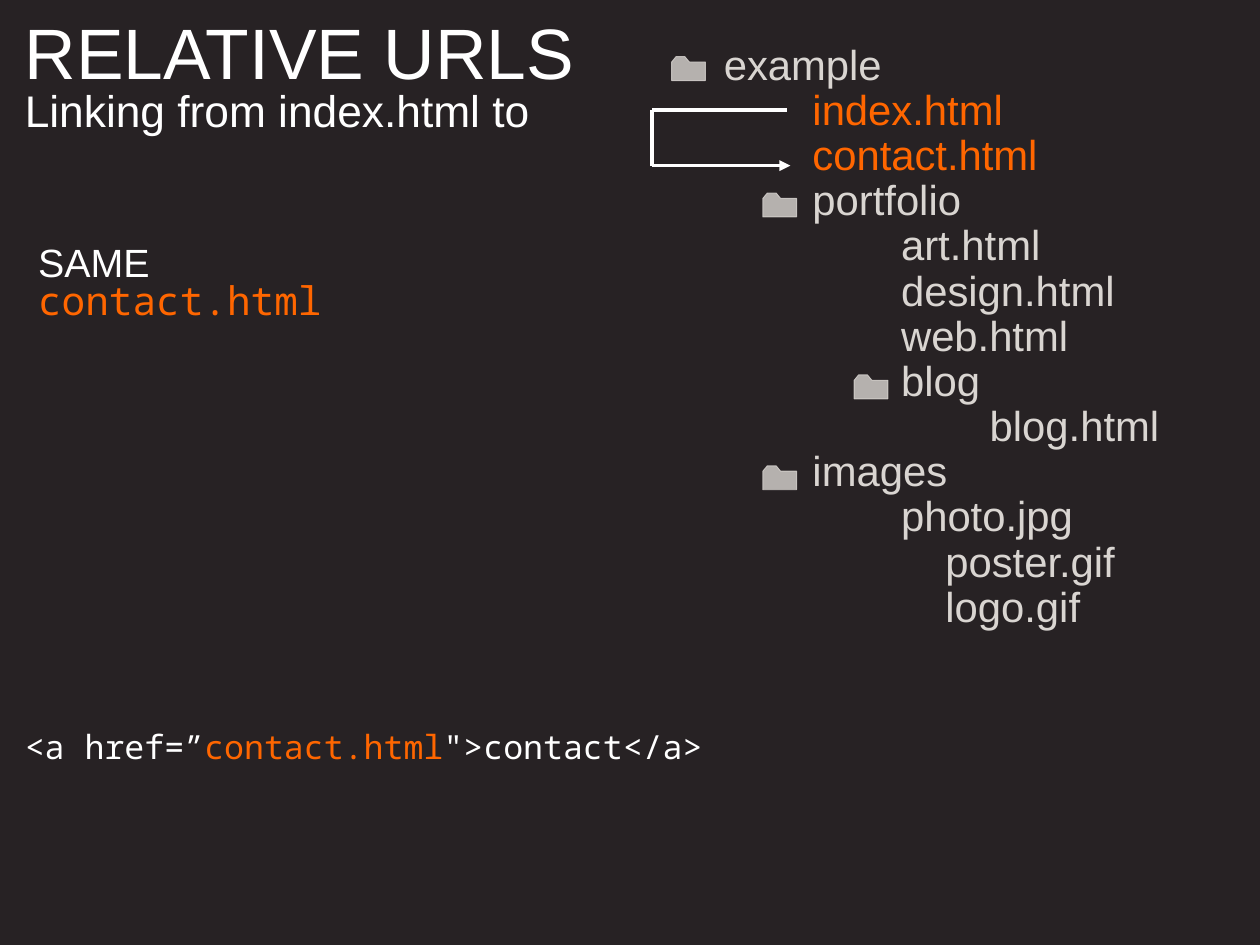
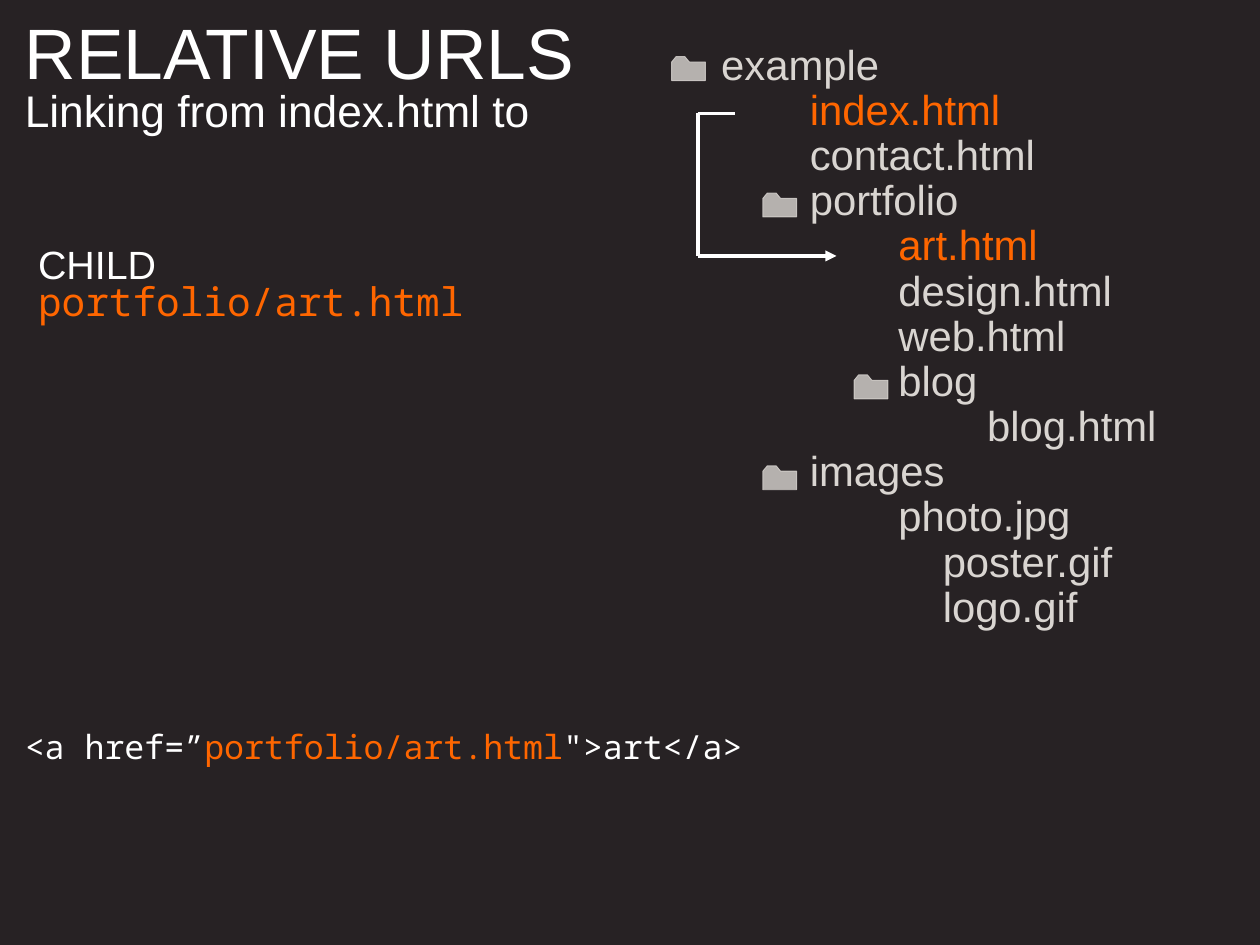
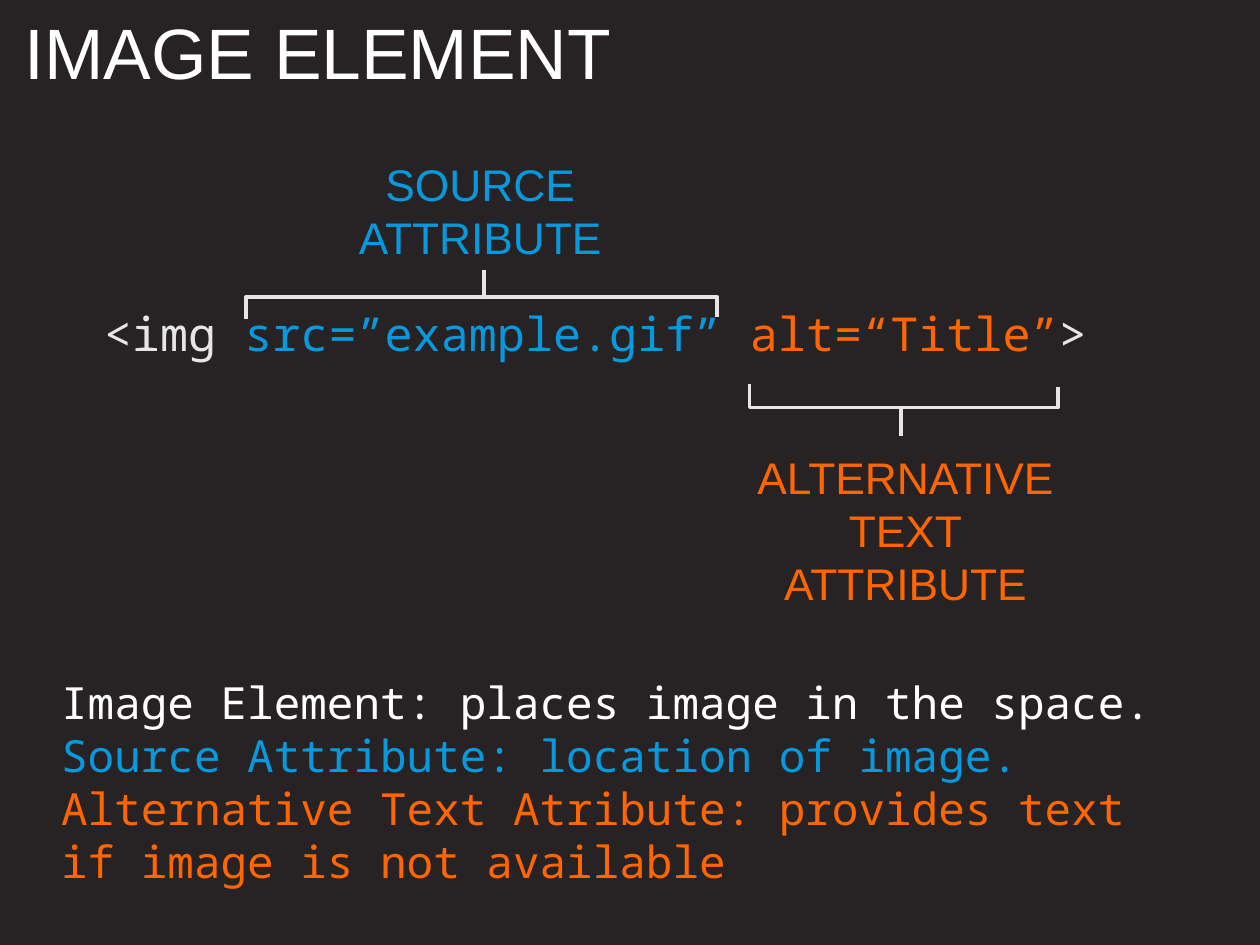
from pptx import Presentation
from pptx.dml.color import RGBColor
from pptx.enum.shapes import MSO_CONNECTOR
from pptx.enum.text import MSO_ANCHOR, PP_ALIGN
from pptx.oxml.ns import qn
from pptx.util import Inches, Pt
from lxml.etree import SubElement

COLORS = {
    "background": "272224",
    "white": "FFFFFF",
    "orange": "FF6600",
    "blue": "0799DE",
    "sand": "D9D5D1",
    "gray": "E6E6E6",
}
SANS = "Arial"
MONO = "Noto Sans Mono"

# (name, indent in inches)
FILE_TREE = [
    ("example", 0), ("index.html", 1), ("contact.html", 1), ("portfolio", 1),
    ("art.html", 2), ("design.html", 2), ("web.html", 2), ("blog", 2),
    ("blog.html", 3), ("images", 1), ("photo.jpg", 2), ("poster.gif", 2.5),
    ("logo.gif", 2.5),
]
FOLDERS = ("example", "portfolio", "blog", "images")
FOLDER_ROW = 1.54 / 3
FOLDER_INDENT = 1.03
FOLDER_OUTLINE = [(0.38, 0.27), (0.38, 0.06), (0.2, 0.06), (0.15, 0),
                  (0.05, 0), (0, 0.06), (0, 0.27)]


def rgb(name):
    return RGBColor.from_string(COLORS[name])


def add_text_box(slide, left, top, width, height, anchor=MSO_ANCHOR.TOP):
    box = slide.shapes.add_textbox(Inches(left), Inches(top), Inches(width), Inches(height))
    tf = box.text_frame
    tf.word_wrap = True
    tf.vertical_anchor = anchor
    tf.margin_left = tf.margin_top = tf.margin_right = tf.margin_bottom = 0
    return tf


def add_paragraph(tf, runs, size, font=SANS, align=PP_ALIGN.LEFT, spacing=None, indent=0):
    """Fill the first empty paragraph or append one; runs are (text, colour) pairs."""
    p = tf.paragraphs[0]
    if p.runs:
        p = tf.add_paragraph()
    p.alignment = align
    p.font.size = Pt(size)
    p.font.name = font
    if spacing:
        p.line_spacing = spacing
    if indent:
        pPr = p._p.get_or_add_pPr()
        pPr.set("marL", str(Inches(indent)))
        pPr.set("indent", "0")
    for text, color in runs:
        r = p.add_run()
        r.text = text
        r.font.color.rgb = rgb(color)


def add_title(slide, title, subtitle=None):
    tf = add_text_box(slide, 0.28, 0.28, 9.04, 1.97)
    add_paragraph(tf, [(title, "white")], 58, spacing=0.8)
    if subtitle:
        add_paragraph(tf, [(subtitle, "white")], 36, spacing=0.8)


def add_line(slide, start, end, color, arrow=False):
    line = slide.shapes.add_connector(
        MSO_CONNECTOR.STRAIGHT, *(Inches(v) for v in (*start, *end)))
    line.line.color.rgb = rgb(color)
    line.line.width = Pt(3)
    if arrow:
        SubElement(line.line._get_or_add_ln(), qn("a:tailEnd"), type="triangle")
    SubElement(line._element.spPr, qn("a:effectLst"))


def add_outline(slide, points, color, width, close):
    first, *rest = [(Inches(x), Inches(y)) for x, y in points]
    builder = slide.shapes.build_freeform(*first)
    builder.add_line_segments(rest, close=close)
    sp = builder.convert_to_shape()
    sp.shadow.inherit = False
    sp.fill.background()
    sp.line.color.rgb = rgb(color)
    sp.line.width = Pt(width)
    return sp


def add_folder(slide, left, top):
    points = [(left + x, top + y) for x, y in FOLDER_OUTLINE]
    sp = add_outline(slide, points, "sand", 0, True)
    sp.fill.solid()
    sp.fill.fore_color.rgb = rgb("sand")
    for color in sp._element.spPr.iter(qn("a:srgbClr")):
        SubElement(color, qn("a:alpha"), val="80000")


def add_file_tree(slide, left, top, text_left, highlights):
    """Place folder icons from (left, top) and the names from text_left."""
    tf = add_text_box(slide, text_left, top - 0.14, 5.5, 6.7)
    for row, (name, indent) in enumerate(FILE_TREE):
        color = "orange" if name in highlights else "sand"
        add_paragraph(tf, [(name, color)], 34, spacing=0.9, indent=indent)
        if name in FOLDERS:
            level = max(indent, 0)
            add_folder(slide, left + level * FOLDER_INDENT, top + row * FOLDER_ROW)


def add_route(slide, points):
    """Join the points with lines, the last one ending in an arrowhead."""
    legs = list(zip(points, points[1:]))
    for start, end in legs:
        add_line(slide, start, end, "white", arrow=(start, end) == legs[-1])


def add_relation(slide, left, top, relation, url):
    for offset, text, font, color in ((0, relation, SANS, "white"),
                                      (0.42, url, MONO, "orange")):
        tf = add_text_box(slide, left, top + offset, 9.2, 0.64, MSO_ANCHOR.MIDDLE)
        add_paragraph(tf, [(text, color)], 32, font)


def add_link_slide(prs, relation, relation_top, url, label, target, tree_left, route):
    slide = prs.slides.add_slide(prs.slide_layouts[6])
    add_relation(slide, 0.43, relation_top, relation, url)
    add_route(slide, route)
    add_file_tree(slide, 7.58, 0.64, tree_left, ("index.html", target))
    tf = add_text_box(slide, 0.28, 8.2, 8.71, 1.97)
    add_paragraph(tf, [("<a href=”", "white"), (url, "orange"),
                       (f"\">{label}</a>", "white")], 27, MONO)
    add_title(slide, "RELATIVE URLS", "Linking from index.html to")


def add_callout(slide, box, lines, color, bracket, stem):
    tf = add_text_box(slide, *box, MSO_ANCHOR.MIDDLE)
    for text in lines:
        add_paragraph(tf, [(text, color)], 36, align=PP_ALIGN.CENTER)
    add_outline(slide, bracket, "gray", 3, False)
    add_line(slide, *stem, "gray")


def add_image_element_slide(prs):
    slide = prs.slides.add_slide(prs.slide_layouts[6])
    tf = add_text_box(slide, 0.92, 3.44, 11.6, 0.64, MSO_ANCHOR.MIDDLE)
    add_paragraph(tf, [("<img ", "gray"), ("src=”example.gif” ", "blue"),
                       ("alt=“Title”", "orange"), (">", "gray")],
                  38, MONO, PP_ALIGN.CENTER)
    add_callout(slide, (3.92, 1.77, 3, 1.21), ("SOURCE", "ATTRIBUTE"), "blue",
                [(2.78, 3.6), (2.78, 3.35), (8.09, 3.35), (8.09, 3.58)],
                ((5.46, 3.38), (5.46, 3.05)))
    add_callout(slide, (8.42, 5.07, 3.6, 1.82), ("ALTERNATIVE", "TEXT", "ATTRIBUTE"), "orange",
                [(8.46, 4.34), (8.46, 4.6), (11.94, 4.6), (11.94, 4.37)],
                ((10.17, 4.59), (10.17, 4.92)))
    tf = add_text_box(slide, 0.69, 7.62, 12.83, 2.6)
    for text, color in (
        ("Image Element: places image in the space.", "white"),
        ("Source Attribute: location of image.", "blue"),
        ("Alternative Text Atribute: provides text if image is not available", "orange"),
    ):
        add_paragraph(tf, [(text, color)], 36, MONO)
    add_title(slide, "IMAGE ELEMENT")


def main():
    prs = Presentation()
    prs.slide_width, prs.slide_height = Inches(14.22), Inches(10.67)
    fill = prs.slide_master.background.fill
    fill.solid()
    fill.fore_color.rgb = rgb("background")

    add_link_slide(prs, "SAME", 2.64, "contact.html", "contact", "contact.html", 8.17,
                   [(8.88, 1.24), (7.36, 1.24), (7.36, 1.87), (8.92, 1.87)])
    add_link_slide(prs, "CHILD", 2.66, "portfolio/art.html", "art", "art.html", 8.14,
                   [(8.29, 1.28), (7.88, 1.28), (7.88, 2.89), (9.44, 2.89)])
    add_image_element_slide(prs)
    prs.save("out.pptx")


if __name__ == "__main__":
    main()
